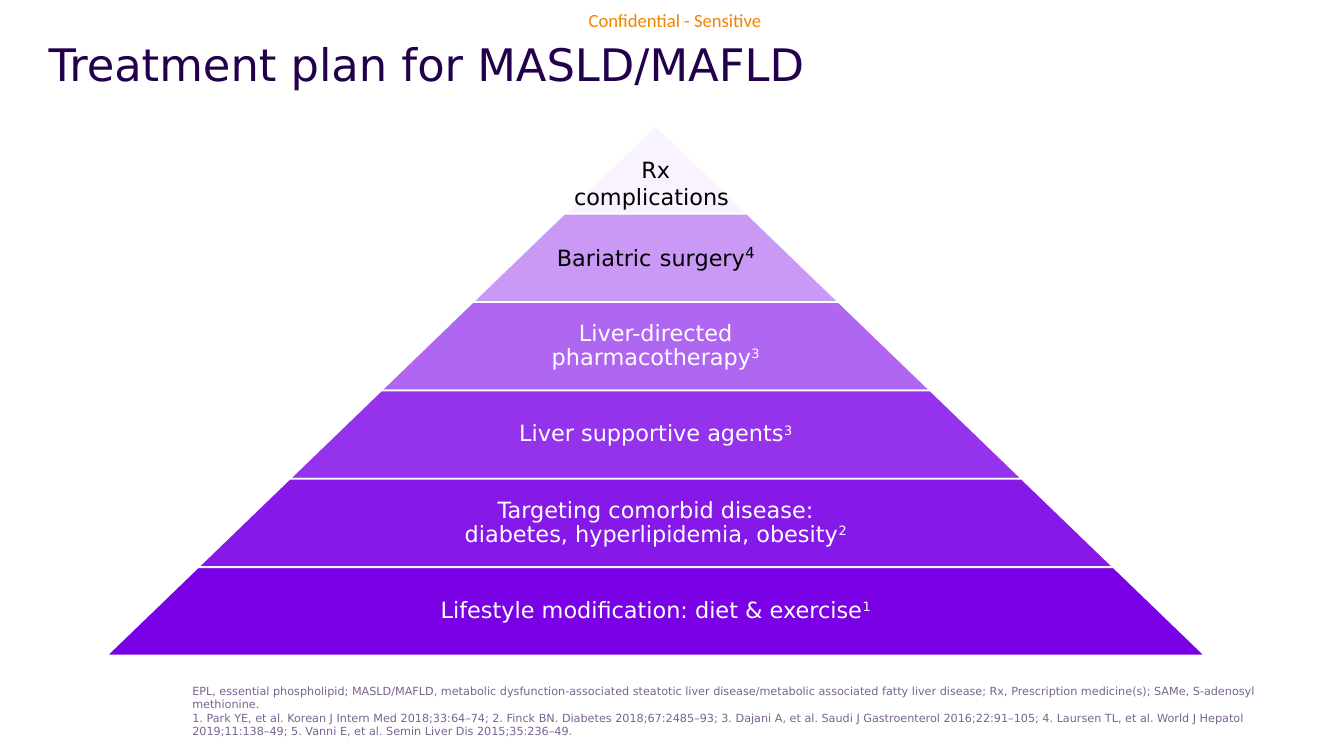
from lxml.etree import SubElement
from pptx import Presentation
from pptx.dml.color import RGBColor
from pptx.enum.shapes import MSO_SHAPE
from pptx.enum.text import MSO_ANCHOR, PP_ALIGN
from pptx.oxml.ns import qn
from pptx.util import Pt

FONT = "DejaVu Sans"
WHITE, BLACK, VIOLET, LILAC = "FFFFFF", "000000", "7A00E6", "E5C7FF"
TIERS = [
    (LILAC, 20, BLACK, [[("Rx", 12)], [("complications", 12), (" ", 14)]]),
    (VIOLET, 40, BLACK, [[("Bariatric", 12), (" ", 14), ("surgery", 12), ("4", 14, True)]]),
    (VIOLET, 60, WHITE, [[("Liver-directed pharmacotherapy", 12), ("3", 12, True)]]),
    (VIOLET, 80, WHITE, [[("Liver supportive agents", 12), ("3", 12, True)]]),
    (VIOLET, 90, WHITE, [[("Targeting comorbid disease:", 12)],
                         [("diabetes, hyperlipidemia, obesity", 12), ("2", 12, True)]]),
    (VIOLET, 100, WHITE, [[("Lifestyle modification: diet & exercise", 12), ("1", 12, True)]]),
]
FOOTNOTES = [
    "EPL, essential phospholipid; MASLD/MAFLD, metabolic dysfunction-associated steatotic liver "
    "disease/metabolic associated fatty liver disease; Rx, Prescription medicine(s); SAMe, "
    "S-adenosyl methionine.",
    "1. Park YE, et al. Korean J Intern Med 2018;33:64–74; 2. Finck BN. Diabetes 2018;67:2485–93; "
    "3. Dajani A, et al. Saudi J Gastroenterol 2016;22:91–105; 4. Laursen TL, et al. World J Hepatol "
    "2019;11:138–49; 5. Vanni E, et al. Semin Liver Dis 2015;35:236–49.",
]


def paint(color_format, color):
    """Apply a hex colour to a font, fill or line colour."""
    color_format.rgb = RGBColor.from_string(color)


def add_run(paragraph, text, size, color, raised=False, font=FONT):
    """Append a styled run, raised as a superscript when asked."""
    run = paragraph.add_run()
    run.text = text
    run.font.size, run.font.name = Pt(size), font
    paint(run.font.color, color)
    if raised:
        run.font._element.set("baseline", "30000")


def set_frame(frame, anchor, inset=0, wrap=True):
    """Set the anchor, wrapping and equal insets of a text frame."""
    frame.word_wrap, frame.vertical_anchor = wrap, anchor
    frame.margin_left = frame.margin_right = Pt(inset)
    frame.margin_top = frame.margin_bottom = Pt(inset)


def add_text_box(slide, box, anchor, inset=0, wrap=True):
    """Add an empty text box and return its frame."""
    frame = slide.shapes.add_textbox(*map(Pt, box)).text_frame
    set_frame(frame, anchor, inset, wrap)
    return frame


def next_paragraph(frame, index):
    """Return the first paragraph of a frame or a new one."""
    return frame.add_paragraph() if index else frame.paragraphs[0]


def add_marking(slide, box):
    """Place the confidentiality marking."""
    marking = add_text_box(slide, box, MSO_ANCHOR.TOP, wrap=False).paragraphs[0]
    marking.alignment = PP_ALIGN.CENTER
    add_run(marking, "Confidential - Sensitive", 10, "F08400", font="Calibri")


def add_title(slide, box):
    """Fill and move the title placeholder."""
    title = slide.shapes.title
    title.left, title.top, title.width, title.height = map(Pt, box)
    set_frame(title.text_frame, MSO_ANCHOR.TOP)
    heading = title.text_frame.paragraphs[0]
    heading.alignment, heading.line_spacing = PP_ALIGN.LEFT, 0.9
    add_run(heading, "Treatment plan for MASLD/MAFLD", 24, "23004C")


def add_band(slide, box, slant, color, opacity):
    """Draw one pyramid band whose sides lean in by the slant."""
    band = slide.shapes.add_shape(MSO_SHAPE.TRAPEZOID, *map(Pt, box))
    band.adjustments[0] = slant / box[3]
    band.shadow.inherit = False
    band.fill.solid()
    paint(band.fill.fore_color, color)
    paint(band.line.color, WHITE)
    band.line.width = Pt(1)
    if opacity < 100:
        fill = band._element.spPr.find(qn("a:solidFill"))
        SubElement(fill[0], qn("a:alpha")).set("val", str(opacity * 1000))


def add_pyramid(slide, box):
    """Stack the tiers from the tip down to the base."""
    left, top, width, height = box
    tier_height = height / len(TIERS)
    slant = width / len(TIERS) / 2
    for index, (color, opacity, ink, lines) in enumerate(TIERS):
        tier_width = 2 * slant * (index + 1)
        tier_left = left + (width - tier_width) / 2
        tier_top = top + index * tier_height
        add_band(slide, (tier_left, tier_top, tier_width, tier_height), slant, color, opacity)
        label_width = tier_width * (0.65 if index else 1)
        label_left = left + (width - label_width) / 2
        label = add_text_box(slide, (label_left, tier_top, label_width, tier_height),
                             MSO_ANCHOR.MIDDLE if index else MSO_ANCHOR.BOTTOM, 1.2)
        for row, runs in enumerate(lines):
            paragraph = next_paragraph(label, row)
            paragraph.alignment, paragraph.line_spacing = PP_ALIGN.CENTER, 0.9
            for text, size, *raised in runs:
                add_run(paragraph, text, size, ink, bool(raised))


def add_footnotes(slide, box):
    """Place the abbreviations and references."""
    frame = add_text_box(slide, box, MSO_ANCHOR.BOTTOM)
    for index, note in enumerate(FOOTNOTES):
        add_run(next_paragraph(frame, index), note, 6, "7A6490")


def main():
    """Build and save the slide."""
    deck = Presentation()
    deck.slide_width, deck.slide_height = Pt(720), Pt(405)
    slide = deck.slides.add_slide(deck.slide_layouts[5])
    add_marking(slide, (314, 5, 95, 12.2))
    add_title(slide, (26, 23, 668, 57))
    add_pyramid(slide, (57, 67.2, 588.6, 284))
    add_footnotes(slide, (103, 364.3, 599, 31))
    deck.save("out.pptx")


if __name__ == "__main__":
    main()
